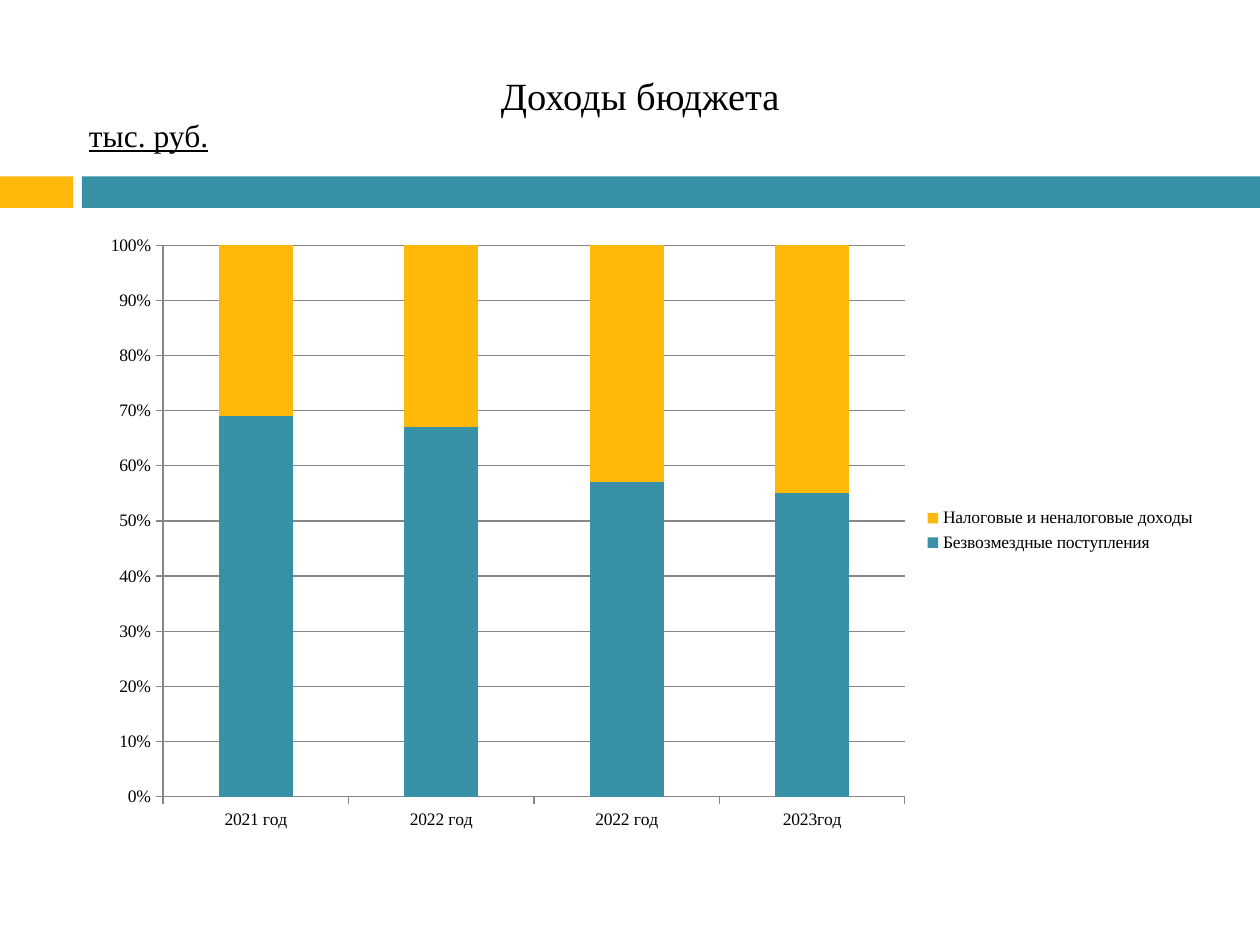
from dataclasses import dataclass
from typing import Any

from lxml import etree
from pptx import Presentation, util as u
from pptx.chart.data import CategoryChartData
from pptx.dml.color import RGBColor
from pptx.enum import chart as ch, shapes, text
from pptx.oxml import ns


def rgb(value):
    """Turn a hex string into a colour."""
    return RGBColor.from_string(value)


@dataclass
class Sheet:
    """Style and current slide; lengths are shares of the slide's size."""

    deck: Any
    slide: Any
    face: str = "Times New Roman"
    ink: str = "000000"
    paper: str = "FFFFFF"
    teal: str = "3891A7"
    amber: str = "FEB80A"
    rule: str = "878787"

    def box(self, left, top, width, height):
        """Convert shares of the slide to lengths."""
        across, down = self.deck.slide_width, self.deck.slide_height
        return [int(left * across), int(top * down), int(width * across), int(height * down)]

    def font(self, font, size):
        """Apply the common font."""
        font.name, font.size, font.color.rgb = self.face, u.Pt(size), rgb(self.ink)

    def wording(self, shape, words, size, underline=False):
        """Put one centred run into a shape."""
        frame = shape.text_frame
        frame.word_wrap = True
        frame.vertical_anchor = text.MSO_ANCHOR.MIDDLE
        line = frame.paragraphs[0]
        line.alignment = text.PP_ALIGN.CENTER
        run = line.add_run()
        run.text = words
        self.font(run.font, size)
        run.font.underline = underline

    def title(self, words, size, *place):
        """Move and fill the title placeholder."""
        title = self.slide.shapes.title
        title.left, title.top, title.width, title.height = self.box(*place)
        self.wording(title, words, size)

    def bar(self, fill, *place):
        """Draw a plain rectangle."""
        bar = self.slide.shapes.add_shape(shapes.MSO_SHAPE.RECTANGLE, *self.box(*place))
        bar.shadow.inherit = False
        bar.fill.solid()
        bar.fill.fore_color.rgb = rgb(fill)
        bar.line.fill.background()
        return bar

    def label(self, words, size, *place):
        """Draw an underlined caption on a paper rectangle."""
        label = self.bar(self.paper, *place)
        label.line.color.rgb, label.line.width = rgb(self.paper), u.Pt(1.5)
        self.wording(label, words, size, underline=True)

    def shares(self, years, series, plot_area, *place):
        """Draw columns stacked to one hundred percent."""
        data = CategoryChartData()
        data.categories = years
        for name, values, _ in series:
            data.add_series(name, values)
        chart = self.slide.shapes.add_chart(
            ch.XL_CHART_TYPE.COLUMN_STACKED_100, *self.box(*place), data).chart
        self.font(chart.font, 10)
        chart.has_title = False
        chart.has_legend = True
        chart.legend.position = ch.XL_LEGEND_POSITION.RIGHT
        chart.legend.include_in_layout = False
        plot = chart.plots[0]
        plot.gap_width, plot.overlap, plot.vary_by_categories = 150, 100, False
        for drawn, (_, _, fill) in zip(plot.series, series):
            drawn.format.fill.solid()
            drawn.format.fill.fore_color.rgb = rgb(fill)
        percent = chart.value_axis
        percent.has_major_gridlines = True
        percent.maximum_scale, percent.major_unit = 1, 0.1
        percent.tick_labels.number_format = "0%"
        percent.tick_labels.number_format_is_linked = False
        for ruled in (percent, chart.category_axis, percent.major_gridlines):
            ruled.format.line.color.rgb = rgb(self.rule)
            ruled.format.line.width = u.Pt(0.75)
        self.set_plot_area(chart, plot_area)

    def set_plot_area(self, chart, shares):
        """Fix the inner plot area as shares of the chart."""
        area = chart.element.find(".//" + ns.qn("c:plotArea"))
        layout = area.find(ns.qn("c:layout"))
        if layout is None:
            layout = etree.Element(ns.qn("c:layout"))
            area.insert(0, layout)
        manual = etree.SubElement(layout, ns.qn("c:manualLayout"))
        settings = [("layoutTarget", "inner"), ("xMode", "edge"), ("yMode", "edge")]
        for tag, value in settings + list(zip("xywh", shares)):
            etree.SubElement(manual, ns.qn("c:" + tag)).set("val", str(value))


def main():
    """Build the budget revenue slide."""
    deck = Presentation()
    deck.slide_width, deck.slide_height = u.Inches(10), u.Inches(7.5)
    sheet = Sheet(deck, deck.slides.add_slide(deck.slide_layouts[5]))
    wide, high = 1 / 10, 1 / 7.5
    band = 1.4 * high, 0.25 * high
    for fill, left, width in ((sheet.amber, 0, 0.58), (sheet.teal, 0.65, 9.35)):
        sheet.bar(fill, left * wide, band[0], width * wide, band[1])
    sheet.title("Доходы бюджета ", 22, 0.83 * wide, 0.36 * high, 8.58 * wide, 0.79 * high)
    sheet.label("тыс. руб.", 18, 0.51 * wide, 0.91 * high, 1.34 * wide, 0.32 * high)
    grants = [69, 67, 57, 55]
    sheet.shares(
        ["2021 год", "2022 год", "2022 год", "2023год"],
        [("Безвозмездные поступления", grants, sheet.teal),
         ("Налоговые и неналоговые доходы", [100 - g for g in grants], sheet.amber)],
        (0.07, 0.04, 0.66, 0.89),
        0.67 * wide, 1.75 * high, 8.92 * wide, 4.92 * high)
    deck.save("out.pptx")


if __name__ == "__main__":
    main()
